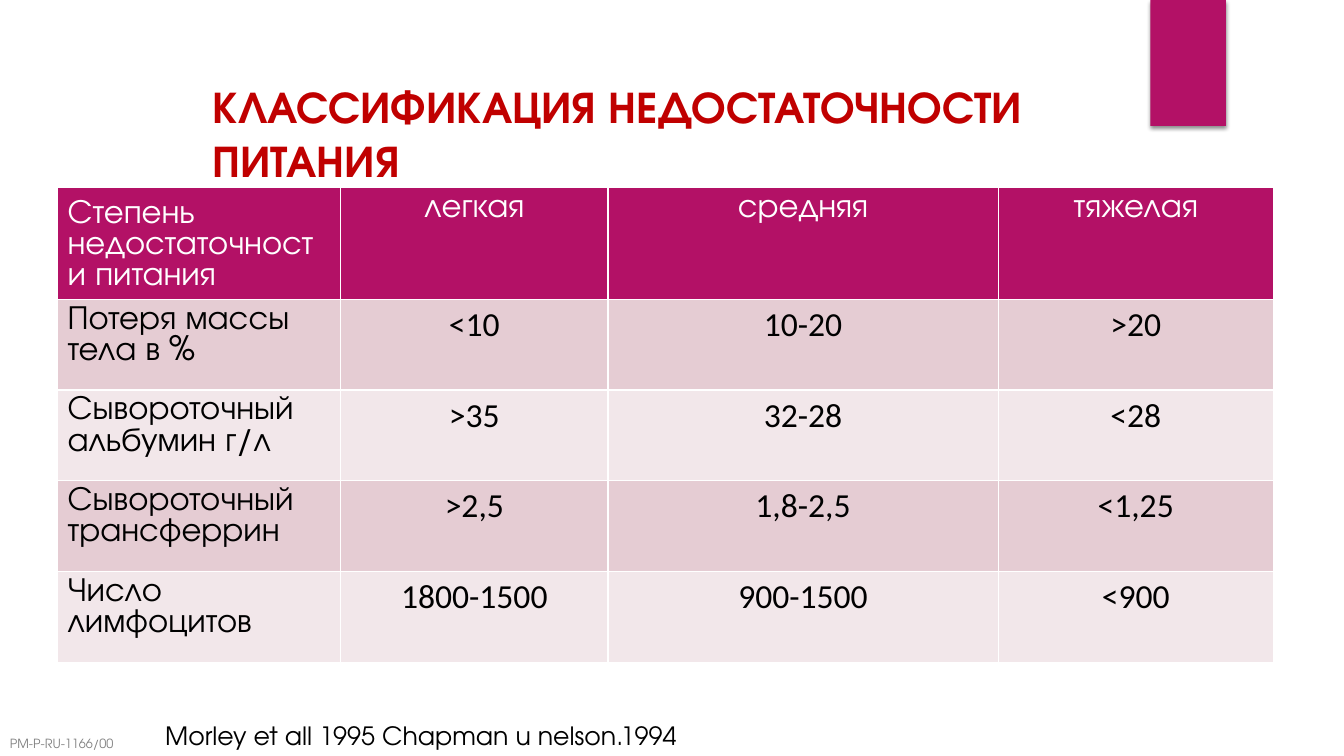
import pptx
import pptx.dml.color
import pptx.enum.shapes
import pptx.enum.text
import pptx.oxml
import pptx.oxml.ns
import pptx.util
from pptx.util import Inches

RGBColor = pptx.dml.color.RGBColor
Align = pptx.enum.text.PP_ALIGN
MAGENTA = RGBColor(0xB3, 0x11, 0x66)
DARK_BAND = RGBColor(0xE5, 0xCC, 0xD3)
LIGHT_BAND = RGBColor(0xF2, 0xE7, 0xEA)
WHITE = RGBColor(0xFF, 0xFF, 0xFF)
BLACK = RGBColor(0x00, 0x00, 0x00)
GRAY = RGBColor(0x80, 0x80, 0x80)
RED = RGBColor(0xC0, 0x00, 0x00)

HEADING_FONT = "TeX Gyre Adventor"
VALUE_FONT = "Calibri"
NAMESPACE = pptx.oxml.ns.nsdecls("a")

COLUMN_WIDTHS = (2.81, 2.65, 3.87, 2.73)
HEADER_HEIGHT = 1.11
ROW_HEIGHT = 0.9
SEVERITY_ROWS = (
    ("Степень недостаточности питания", "легкая", "средняя", "тяжелая"),
    ("Потеря массы тела в %", "<10", "10-20", ">20"),
    ("Сывороточный альбумин г/л", ">35", "32-28", "<28"),
    ("Сывороточный трансферрин", ">2,5", "1,8-2,5", "<1,25"),
    ("Число лимфоцитов", "1800-1500", "900-1500", "<900"),
)


def write_text(frame, text, size=24, font=HEADING_FONT, color=BLACK, bold=False,
               align=Align.LEFT):
    frame.word_wrap = True
    para = frame.paragraphs[0]
    para.alignment = align
    span = para.add_run()
    span.text = text
    span.font.size = pptx.util.Pt(size)
    span.font.name = font
    span.font.bold = bold
    span.font.color.rgb = color


def add_label(page, left, top, width, height, text, **text_format):
    box = page.shapes.add_textbox(Inches(left), Inches(top), Inches(width), Inches(height))
    write_text(box.text_frame, text, **text_format)


def add_corner_tab(page, left, top, width, height):
    tab = page.shapes.add_shape(pptx.enum.shapes.MSO_SHAPE.RECTANGLE, Inches(left),
                                Inches(top), Inches(width), Inches(height))
    tab.fill.solid()
    tab.fill.fore_color.rgb = MAGENTA
    tab.line.fill.background()
    tab.shadow.inherit = False
    effects = tab.element.spPr.find(pptx.oxml.ns.qn("a:effectLst"))
    effects.append(pptx.oxml.parse_xml(
        f'<a:outerShdw {NAMESPACE} blurRad="{pptx.util.Pt(3)}" dist="{pptx.util.Pt(2)}" '
        f'dir="5400000" rotWithShape="0"><a:srgbClr val="{BLACK}">'
        '<a:alpha val="45000"/></a:srgbClr></a:outerShdw>'))


def set_borders(cell):
    """Draw white cell edges; line elements precede the fill in the schema."""
    for position, edge in enumerate(("lnL", "lnR", "lnT", "lnB")):
        line = pptx.oxml.parse_xml(
            f'<a:{edge} {NAMESPACE} w="{pptx.util.Pt(1)}"><a:solidFill>'
            f'<a:srgbClr val="{WHITE}"/></a:solidFill></a:{edge}>')
        cell._tc.get_or_add_tcPr().insert(position, line)


def style_cell(cell, text, row, column):
    is_header, is_label = row == 0, column == 0
    cell.fill.solid()
    cell.fill.fore_color.rgb = MAGENTA if is_header else DARK_BAND if row % 2 else LIGHT_BAND
    set_borders(cell)
    if is_header and is_label:
        cell.margin_top = Inches(0.11)
    write_text(cell.text_frame, text,
               font=HEADING_FONT if is_header or is_label else VALUE_FONT,
               color=WHITE if is_header else BLACK,
               align=Align.LEFT if is_label else Align.CENTER)


def add_severity_table(page, left, top):
    heights = [HEADER_HEIGHT] + [ROW_HEIGHT] * (len(SEVERITY_ROWS) - 1)
    table = page.shapes.add_table(
        len(heights), len(COLUMN_WIDTHS), Inches(left), Inches(top),
        Inches(sum(COLUMN_WIDTHS)), Inches(sum(heights))).table
    for column, width in zip(table.columns, COLUMN_WIDTHS):
        column.width = Inches(width)
    for row, height in zip(table.rows, heights):
        row.height = Inches(height)
    for row, texts in enumerate(SEVERITY_ROWS):
        for column, text in enumerate(texts):
            style_cell(table.cell(row, column), text, row, column)


def main():
    deck = pptx.Presentation()
    deck.slide_width, deck.slide_height = Inches(13.33), Inches(7.5)
    page = deck.slides.add_slide(deck.slide_layouts[6])
    add_corner_tab(page, 11.41, 0, 0.75, 1.25)
    add_severity_table(page, 0.57, 1.86)
    add_label(page, 1.54, 7.1, 5.55, 0.4, "Morley et all 1995 Chapman u nelson.1994", size=18)
    add_label(page, 0, 7.25, 1.26, 0.25, "PM-P-RU-1166/00", size=9, color=GRAY)
    add_label(page, 2.01, 0.73, 9.83, 0.64, "КЛАССИФИКАЦИЯ НЕДОСТАТОЧНОСТИ ПИТАНИЯ",
              size=32, color=RED, bold=True)
    deck.save("out.pptx")


if __name__ == "__main__":
    main()
